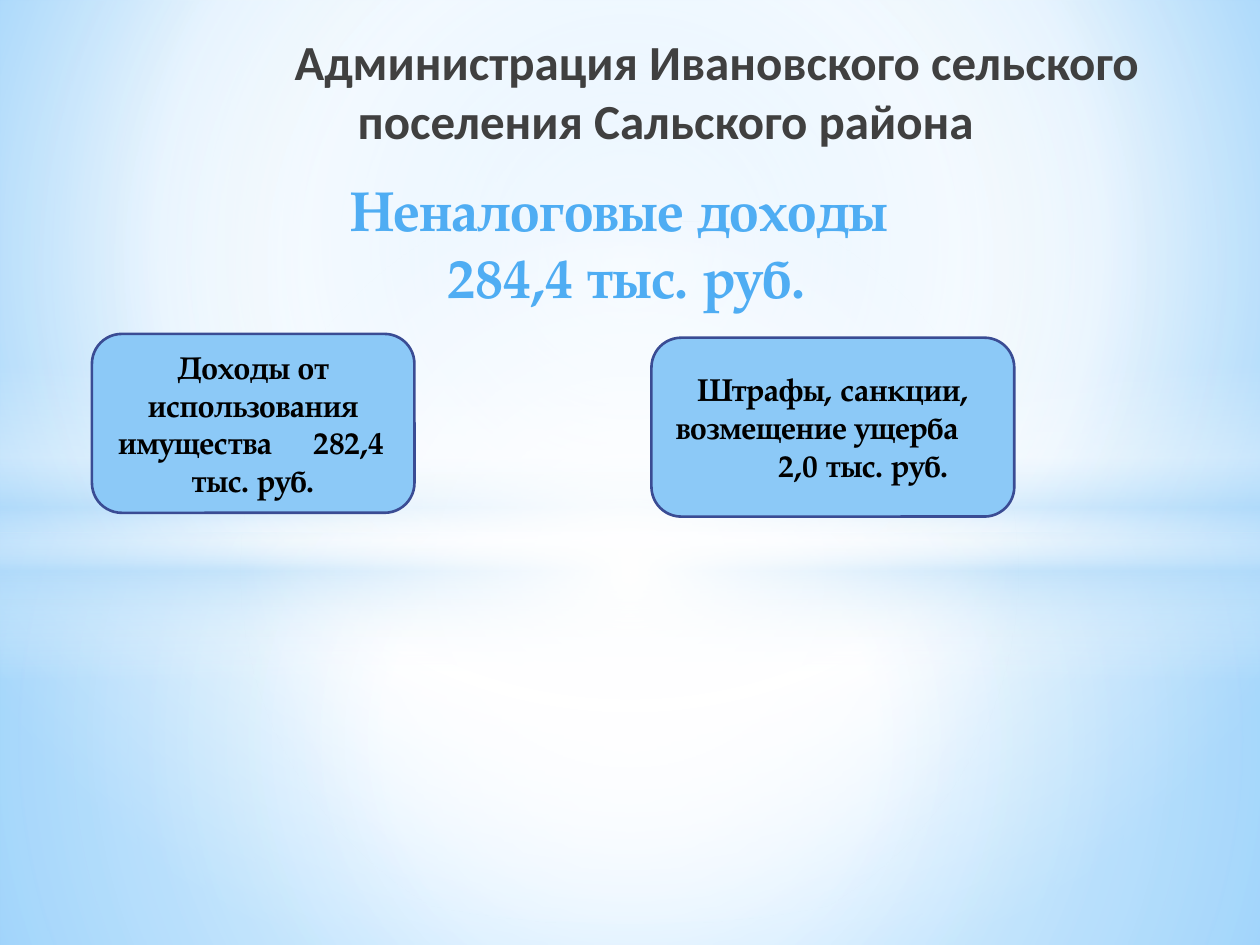
from dataclasses import dataclass, field

from lxml import etree
from pptx import Presentation
from pptx.dml.color import RGBColor
from pptx.enum.shapes import MSO_SHAPE
from pptx.enum.text import MSO_ANCHOR, MSO_AUTO_SIZE, PP_ALIGN
from pptx.oxml.ns import qn
from pptx.util import Inches, Pt

RECTANGLE = MSO_SHAPE.RECTANGLE
ELLIPSE = MSO_SHAPE.OVAL
ROUNDED = MSO_SHAPE.ROUNDED_RECTANGLE
CENTER, LEFT = PP_ALIGN.CENTER, PP_ALIGN.LEFT
TOP, MIDDLE = MSO_ANCHOR.TOP, MSO_ANCHOR.MIDDLE
NO_FIT, GROW = MSO_AUTO_SIZE.NONE, MSO_AUTO_SIZE.SHAPE_TO_FIT_TEXT

COLUMNS, ROWS = 100, 75
CELL = Inches(0.1)
COLORS = {
    "sky": "9ED5FF",
    "deep": "5BB9FF",
    "white": "FFFFFF",
    "mist": "B4DCFA",
    "title": "404040",
    "heading": "4FADF3",
    "contour": "7D7D7D",
    "card": "8CC9F7",
    "border": "3A4C94",
    "text": "000000",
}
CENTRE_FOCUS = (50, 50, 50, 50)
FORMATS = {
    "title": {"size": Pt(28), "name": "Calibri", "bold": True},
    "heading": {"size": Pt(32), "name": "TeX Gyre Pagella", "bold": True},
    "text": {"size": Pt(18), "name": "TeX Gyre Pagella", "bold": True},
}


@dataclass(frozen=True)
class Area:
    column: float
    row: float
    columns: float
    rows: float

    def box(self) -> list:
        return [round(CELL * value) for value in (self.column, self.row, self.columns, self.rows)]


@dataclass(frozen=True)
class Gradient:
    stops: tuple
    focus: tuple = ()


@dataclass(frozen=True)
class Glow:
    kind: int
    area: Area
    gradient: Gradient


@dataclass(frozen=True)
class Line:
    text: str
    align: int = CENTER
    indents: dict = field(default_factory=dict)
    tab: float = 0


@dataclass(frozen=True)
class Card:
    area: Area
    lines: tuple


BACKDROP = Gradient(((0, "sky", 100), (60, "white", 100), (100, "deep", 100)), (20, 10, 20, 60))
GLOWS = (
    Glow(RECTANGLE, Area(0, 42.3, COLUMNS, 32.7),
         Gradient(((0, "white", 91), (37, "white", 76), (100, "mist", 79)), CENTRE_FOCUS)),
    Glow(RECTANGLE, Area(0, 0, COLUMNS, 42.3),
         Gradient(((0, "white", 89), (48, "white", 62), (100, "mist", 79)), CENTRE_FOCUS)),
    Glow(RECTANGLE, Area(0, 29, COLUMNS, 25),
         Gradient(((0, "white", 0), (29, "white", 30), (45, "mist", 40),
                   (55, "white", 26), (65, "mist", 60), (100, "white", 0)))),
    Glow(ELLIPSE, Area(0, 17.5, COLUMNS, 55.8),
         Gradient(((0, "white", 100), (54, "white", 0)), CENTRE_FOCUS)),
)
TITLE_AREA = Area(20.4, 2, 76.9, 10.7)
TITLE = (Line("Администрация Ивановского сельского поселения Сальского района",
              LEFT, {"marL": 7, "indent": -5}),)
HEADING_AREA = Area(6.5, 13.4, 86.4, 11.8)
HEADING = (Line("Неналоговые доходы "), Line("284,4 тыс. руб."))
CARDS = (
    Card(Area(7.3, 26.5, 25.6, 14.2), (
        Line("Доходы от использования"),
        Line("имущества\t282,4", LEFT, {"marL": 0.4}, 15.5),
        Line("тыс. руб.", CENTER, {"marL": 0}),
    )),
    Card(Area(51.7, 26.8, 28.8, 14.2), (
        Line("Штрафы, санкции,"),
        Line("возмещение ущерба", CENTER, {"marR": 2.5}),
        Line("2,0 тыс. руб.", CENTER, {"marL": 4.9, "marR": 0}),
    )),
)


def color(name: str) -> RGBColor:
    return RGBColor.from_string(COLORS[name])


def add_child(parent, tag: str, **attributes):
    values = {key: str(value) for key, value in attributes.items()}
    return etree.SubElement(parent, qn(tag), values)


def apply_gradient(properties, gradient: Gradient) -> None:
    fill = etree.Element(qn("a:gradFill"), {"rotWithShape": "1"})
    stops = add_child(fill, "a:gsLst")
    for position, name, opacity in gradient.stops:
        stop = add_child(stops, "a:gs", pos=position * 1000)
        shade = add_child(stop, "a:srgbClr", val=COLORS[name])
        if opacity < 100:
            add_child(shade, "a:alpha", val=opacity * 1000)
    if gradient.focus:
        path = add_child(fill, "a:path", path="circle")
        sides = {side: share * 1000 for side, share in zip("ltrb", gradient.focus)}
        add_child(path, "a:fillToRect", **sides)
    else:
        add_child(fill, "a:lin", ang=90 * 60000, scaled=0)
    properties.replace(properties.find(qn("a:solidFill")), fill)


def write_lines(shape, lines: tuple, style: str, anchor: int, fit: int = NO_FIT) -> None:
    frame = shape.text_frame
    frame.word_wrap = True
    frame.vertical_anchor = anchor
    frame.auto_size = fit
    for number, line in enumerate(lines):
        paragraph = frame.add_paragraph() if number else frame.paragraphs[0]
        paragraph.alignment = line.align
        run = paragraph.add_run()
        run.text = line.text
        for attribute, value in FORMATS[style].items():
            setattr(run.font, attribute, value)
        run.font.color.rgb = color(style)
        properties = paragraph._p.get_or_add_pPr()
        for attribute, cells in line.indents.items():
            properties.set(attribute, str(round(CELL * cells)))
        if line.tab:
            tabs = add_child(properties, "a:tabLst")
            add_child(tabs, "a:tab", pos=round(CELL * line.tab), algn="l")


def outline_text(shape, name: str, width: float) -> None:
    for properties in shape.element.iter(qn("a:rPr")):
        outline = etree.Element(qn("a:ln"), {"w": str(Pt(width))})
        add_child(add_child(outline, "a:solidFill"), "a:srgbClr", val=COLORS[name])
        properties.insert(0, outline)


def add_plain_shape(slide, kind: int, area: Area, fill: str):
    shape = slide.shapes.add_shape(kind, *area.box())
    shape.shadow.inherit = False
    shape.fill.solid()
    shape.fill.fore_color.rgb = color(fill)
    return shape


def draw_glow(slide, glow: Glow) -> None:
    shape = add_plain_shape(slide, glow.kind, glow.area, "white")
    shape.line.fill.background()
    apply_gradient(shape.element.spPr, glow.gradient)


def draw_card(slide, card: Card) -> None:
    shape = add_plain_shape(slide, ROUNDED, card.area, "card")
    shape.line.color.rgb = color("border")
    shape.line.width = Pt(1.5)
    write_lines(shape, card.lines, "text", MIDDLE)


def main() -> None:
    presentation = Presentation()
    presentation.slide_width = CELL * COLUMNS
    presentation.slide_height = CELL * ROWS
    slide = presentation.slides.add_slide(presentation.slide_layouts[6])
    slide.background.fill.solid()
    apply_gradient(slide.element.find(".//" + qn("p:bgPr")), BACKDROP)
    for glow in GLOWS:
        draw_glow(slide, glow)
    title = slide.shapes.add_textbox(*TITLE_AREA.box())
    write_lines(title, TITLE, "title", TOP)
    heading = slide.shapes.add_textbox(*HEADING_AREA.box())
    write_lines(heading, HEADING, "heading", TOP, GROW)
    outline_text(heading, "contour", 0.83)
    for card in CARDS:
        draw_card(slide, card)
    presentation.save("out.pptx")


if __name__ == "__main__":
    main()
